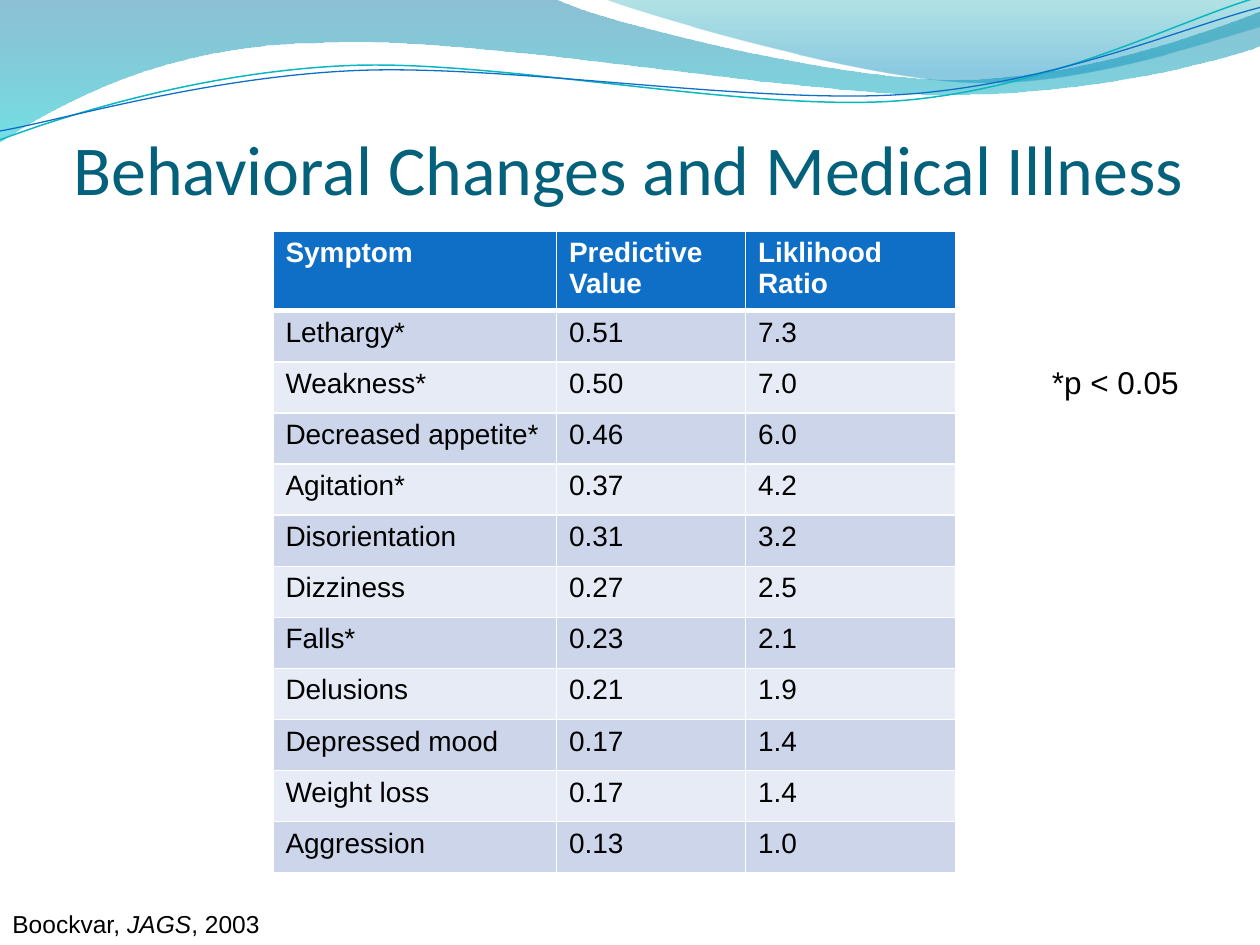
import math

import pptx
import pptx.dml.color
import pptx.enum.text
import pptx.oxml.ns
import pptx.util
from lxml import etree

COLORS = {
    "title": "04617B", "header": "0F6FC6", "odd": "CCD5EA", "even": "E7EBF5",
    "text": "000000", "white": "FFFFFF", "teal_line": "0AB8BF",
    "deep": "0074A1", "aqua": "00C6CF", "sea": "00A1A9", "sky": "008BBF",
}
COLUMNS, ROWS = 120, 90
RIPPLE_TILT = -2.7

SYMPTOMS = [
    ("Symptom", "Predictive Value", "Liklihood Ratio"),
    ("Lethargy*", "0.51", "7.3"),
    ("Weakness*", "0.50", "7.0"),
    ("Decreased appetite*", "0.46", "6.0"),
    ("Agitation*", "0.37", "4.2"),
    ("Disorientation", "0.31", "3.2"),
    ("Dizziness", "0.27", "2.5"),
    ("Falls*", "0.23", "2.1"),
    ("Delusions", "0.21", "1.9"),
    ("Depressed mood", "0.17", "1.4"),
    ("Weight loss", "0.17", "1.4"),
    ("Aggression", "0.13", "1.0"),
]

# Wave outlines in inches: one point is a straight step, three a Bezier step.
BACK_WAVE = [
    [(0, -0.01)], [(4.4, -0.01)], [(4.76, 0.17), (6.64, 0.63), (7.58, 0.63)],
    [(8.53, 0.63), (9.58, 0.26), (10, 0.09)], [(10.01, 0.36)],
    [(9.83, 0.44), (8.7, 0.76), (7.46, 0.75)],
    [(6.22, 0.75), (3.82, 0.28), (2.57, 0.34)],
    [(1.29, 0.35), (0.46, 0.83), (-0.01, 1.13)], [(0, -0.01)],
]
FRONT_WAVE = [
    [(4.79, -0.01)], [(5.09, 0.11), (6.82, 0.62), (7.69, 0.65)],
    [(8.56, 0.69), (9.61, 0.32), (10, 0.21)], [(10, 0)], [(4.79, -0.01)],
]
TEAL_RIPPLE = [
    [(0, 1.11)], [(0.48, 0.93), (1.58, 0.57), (2.77, 0.52)],
    [(3.95, 0.47), (5.93, 0.89), (7.13, 0.8)],
    [(8.33, 0.71), (9.38, 0.15), (9.98, -0.02)],
]
BLUE_RIPPLE = [
    [(0, 1.04)], [(0.47, 0.96), (1.64, 0.61), (2.83, 0.56)],
    [(4.03, 0.51), (5.97, 0.83), (7.17, 0.75)],
    [(8.36, 0.67), (9.41, 0.21), (10, 0.06)],
]


def rgb(name):
    return pptx.dml.color.RGBColor.from_string(COLORS[name])


def turn(outline, degrees, center):
    """Rotate every point of an outline clockwise about a center."""
    cos, sin = math.cos(math.radians(degrees)), math.sin(math.radians(degrees))
    cx, cy = center
    return [[(cx + (x - cx) * cos - (y - cy) * sin,
              cy + (x - cx) * sin + (y - cy) * cos) for x, y in step]
            for step in outline]


class Deck:
    def __init__(self, width, height):
        self.presentation = pptx.Presentation()
        self.presentation.slide_width = pptx.util.Inches(width)
        self.presentation.slide_height = pptx.util.Inches(height)
        self.column = self.presentation.slide_width / COLUMNS
        self.row = self.presentation.slide_height / ROWS
        layout = self.presentation.slide_layouts.get_by_name("Title Only")
        self.slide = self.presentation.slides.add_slide(layout)

    def area(self, left, top, width, height):
        return (round(left * self.column), round(top * self.row),
                round(width * self.column), round(height * self.row))

    def style(self, run, size, color="text", font="Arial", bold=False, italic=False):
        run.font.name, run.font.size = font, pptx.util.Pt(size)
        run.font.bold, run.font.italic = bold, italic
        run.font.color.rgb = rgb(color)

    def curve(self, outline, closed):
        """Build a freeform, then join the points of each Bezier step."""
        points = [(pptx.util.Inches(x), pptx.util.Inches(y))
                  for step in outline for x, y in step]
        builder = self.slide.shapes.build_freeform(*points[0])
        builder.add_line_segments(points[1:], close=closed)
        shape = builder.convert_to_shape()
        shape.shadow.inherit = False
        segments = iter(shape._element.findall(".//" + pptx.oxml.ns.qn("a:lnTo")))
        for step in outline[1:]:
            first, *others = [next(segments) for _ in step]
            if others:
                first.tag = pptx.oxml.ns.qn("a:cubicBezTo")
            for other in others:
                first.append(other[0])
                other.getparent().remove(other)
        return shape

    def wave(self, outline, stops):
        """Draw a filled wave; stops are (position, color, opacity percent)."""
        shape = self.curve(outline, True)
        shape.line.fill.background()
        shape.fill.gradient()
        shape.fill.gradient_angle = 270
        for stop, (position, color, _) in zip(shape.fill.gradient_stops, stops):
            stop.position = position
            stop.color.rgb = rgb(color)
        tints = shape._element.spPr.findall(".//" + pptx.oxml.ns.qn("a:srgbClr"))
        for tint, (_, _, opacity) in zip(tints, stops):
            etree.SubElement(tint, pptx.oxml.ns.qn("a:alpha"), val=str(opacity * 1000))

    def ripple(self, outline, center, color, weight):
        shape = self.curve(turn(outline, -RIPPLE_TILT, center), False)
        shape.rotation = RIPPLE_TILT
        shape.fill.background()
        shape.line.color.rgb = rgb(color)
        shape.line.width = pptx.util.Pt(weight)

    def title(self, text, *place):
        heading = self.slide.shapes.title
        heading.left, heading.top, heading.width, heading.height = self.area(*place)
        frame = heading.text_frame
        frame.text = text
        frame.auto_size = pptx.enum.text.MSO_AUTO_SIZE.NONE
        frame.vertical_anchor = pptx.enum.text.MSO_ANCHOR.BOTTOM
        frame.margin_left = frame.margin_right = frame.margin_bottom = 0
        frame.paragraphs[0].alignment = pptx.enum.text.PP_ALIGN.LEFT
        self.style(frame.paragraphs[0].runs[0], 40, "title", "Calibri")
        self.slide.shapes._spTree.append(heading._element)

    def note(self, parts, size, *place):
        """Add a one-line text; parts are (text, italic)."""
        frame = self.slide.shapes.add_textbox(*self.area(*place)).text_frame
        frame.word_wrap = False
        frame.auto_size = pptx.enum.text.MSO_AUTO_SIZE.SHAPE_TO_FIT_TEXT
        for text, italic in parts:
            run = frame.paragraphs[0].add_run()
            run.text = text
            self.style(run, size, italic=italic)

    def border(self, cell, top, bottom):
        properties = cell._tc.get_or_add_tcPr()
        for index, (side, weight) in enumerate(
                (("L", 1), ("R", 1), ("T", top), ("B", bottom))):
            line = etree.Element(pptx.oxml.ns.qn("a:ln" + side),
                                 w=str(pptx.util.Pt(weight)))
            fill = etree.SubElement(line, pptx.oxml.ns.qn("a:solidFill"))
            etree.SubElement(fill, pptx.oxml.ns.qn("a:srgbClr"), val=COLORS["white"])
            properties.insert(index, line)

    def table(self, records, left, top, widths, header_height, row_height):
        height = header_height + row_height * (len(records) - 1)
        grid = self.slide.shapes.add_table(
            len(records), len(widths),
            *self.area(left, top, sum(widths), height)).table
        for column, width in zip(grid.columns, widths):
            column.width = round(width * self.column)
        for r, record in enumerate(records):
            header = r == 0
            grid.rows[r].height = round((header_height if header else row_height) * self.row)
            band = "header" if header else "odd" if r % 2 else "even"
            for c, text in enumerate(record):
                cell = grid.cell(r, c)
                cell.text_frame.text = text
                self.style(cell.text_frame.paragraphs[0].runs[0], 16,
                           "white" if header else "text", bold=header)
                cell.fill.solid()
                cell.fill.fore_color.rgb = rgb(band)
                self.border(cell, 3 if r == 1 else 1, 3 if header else 1)


def main():
    deck = Deck(10, 7.5)
    deck.wave(BACK_WAVE, [(0, "deep", 45), (1, "aqua", 55)])
    deck.wave(FRONT_WAVE, [(0, "sea", 30), (0.8, "sky", 45)])
    deck.ripple(TEAL_RIPPLE, (4.99, 0.57), "teal_line", 0.85)
    deck.ripple(BLUE_RIPPLE, (5, 0.59), "header", 0.75)
    deck.title("Behavioral Changes and Medical Illness", 7, 7, 113, 13)
    deck.table(SYMPTOMS, 26, 22, (27, 18, 20), 7.6, 4.87)
    deck.note([("*p < 0.05", False)], 18, 99, 34, 14.6, 4.8)
    deck.note([("Boockvar, ", False), ("JAGS", True), (", 2003", False)],
              14, 0, 86, 26, 4)
    deck.presentation.save("out.pptx")


if __name__ == "__main__":
    main()
